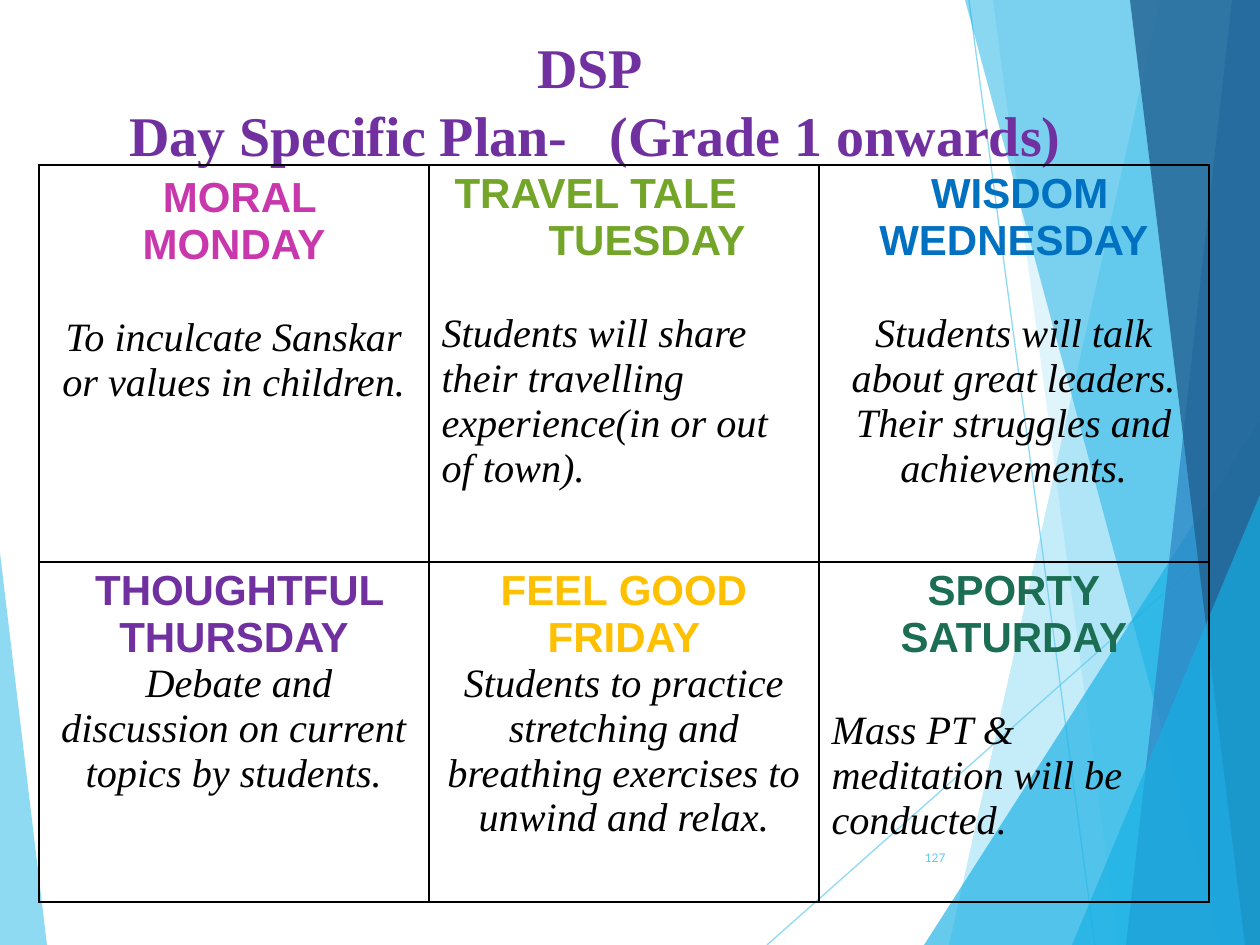
from lxml import etree
from pptx import Presentation
from pptx.dml.color import RGBColor
from pptx.enum.shapes import MSO_CONNECTOR, MSO_SHAPE
from pptx.enum.text import MSO_ANCHOR, PP_ALIGN
from pptx.oxml.ns import qn
from pptx.util import Emu, Pt

PX = 914400 / 126
WIDTH, HEIGHT = 1260, 945

SKY = RGBColor(0x5F, 0xCB, 0xEF)
CYAN = RGBColor(0x17, 0xB0, 0xE4)
BLUE = RGBColor(0x2E, 0x83, 0xC3)
NAVY = RGBColor(0x22, 0x62, 0x92)
PURPLE = RGBColor(0x70, 0x30, 0xA0)
PINK = RGBColor(0xC9, 0x37, 0xAD)
GREEN = RGBColor(0x72, 0xA5, 0x28)
AZURE = RGBColor(0x00, 0x70, 0xC0)
AMBER = RGBColor(0xFF, 0xC0, 0x00)
FOREST = RGBColor(0x1B, 0x6E, 0x53)
BLACK = RGBColor(0, 0, 0)
LEFT, CENTER, RIGHT = PP_ALIGN.LEFT, PP_ALIGN.CENTER, PP_ALIGN.RIGHT


def px(*lengths):
    return [Emu(round(length * PX)) for length in lengths]


def set_opacity(properties, percent):
    """Make the solid colour inside a shape or line element translucent."""
    color = properties.find(".//" + qn("a:srgbClr"))
    etree.SubElement(color, qn("a:alpha")).set("val", str(percent * 1000))


presentation = Presentation()
presentation.slide_width, presentation.slide_height = px(WIDTH, HEIGHT)
slide = presentation.slides.add_slide(presentation.slide_layouts[6])
shapes = slide.shapes

# Background facets
for ends in [(969, 0, 1095, HEIGHT), (WIDTH, 508, 767, HEIGHT)]:
    line = shapes.add_connector(MSO_CONNECTOR.STRAIGHT, *px(*ends))
    line.line.color.rgb = SKY
    line.line.width = Pt(0.75)
    properties = line._element.spPr
    set_opacity(properties, 70)
    etree.SubElement(properties, qn("a:effectLst"))

# Each band reaches the right edge: top-left x, bottom-left x, colour, opacity.
# Each triangle stands on the bottom edge: left, top, width, apex, colour, opacity.
facets = [
    ("band", (1160, 949), SKY, 36),
    ("band", (993, 1118), SKY, 20),
    ("triangle", (924, 420, 336, 1), CYAN, 66),
    ("band", (965, 1220), CYAN, 50),
    ("band", (1232, 1126), BLUE, 70),
    ("band", (1130, 1245), NAVY, 80),
    ("triangle", (1072, 495, 188, 1), CYAN, 66),
    ("triangle", (0, 553, 47, 0), SKY, 70),
]
for kind, place, color, opacity in facets:
    if kind == "band":
        top_x, bottom_x = place
        builder = shapes.build_freeform(top_x, 0, scale=PX)
        builder.add_line_segments([(WIDTH, 0), (WIDTH, HEIGHT), (bottom_x, HEIGHT)])
        facet = builder.convert_to_shape()
    else:
        left, top, width, apex = place
        facet = shapes.add_shape(MSO_SHAPE.ISOSCELES_TRIANGLE, *px(left, top, width, HEIGHT - top))
        facet.adjustments[0] = apex
    facet.shadow.inherit = False
    facet.fill.solid()
    facet.fill.fore_color.rgb = color
    facet.line.fill.background()
    set_opacity(facet._element.spPr, opacity)

# Title
title = shapes.add_textbox(*px(35, 19, 1121, 146)).text_frame
title.word_wrap = True
title.margin_top, title.margin_bottom = px(13, 0)
title.text = "DSP \nDay Specific Plan-   (Grade 1 onwards)"
for paragraph in title.paragraphs:
    paragraph.alignment = CENTER
    paragraph.space_before = Pt(1)
    paragraph.font.name = "Times New Roman"
    paragraph.font.size = Pt(32)
    paragraph.font.bold = True
    paragraph.font.color.rgb = PURPLE

# Weekly plan: heading lines, heading colour, body, body alignment, gap in points
plan = [
    [
        ([" MORAL", "MONDAY"], PINK,
         "To inculcate Sanskar or values in children.", CENTER, 27),
        (["TRAVEL TALE", "TUESDAY"], GREEN,
         "Students will share their travelling experience(in or out of town).", LEFT, 27),
        ([" WISDOM", "WEDNESDAY"], AZURE,
         "Students will talk about great leaders. Their struggles and achievements.", CENTER, 27),
    ],
    [
        ([" THOUGHTFUL", "THURSDAY"], PURPLE,
         " Debate and discussion on current topics by students.", CENTER, 0),
        (["FEEL GOOD", "FRIDAY"], AMBER,
         "Students to practice stretching and breathing exercises to unwind and relax.", CENTER, 0),
        (["SPORTY", "SATURDAY"], FOREST,
         "Mass PT & meditation will be conducted.", LEFT, 27),
    ],
]
TUESDAY_INDENTS = px(13, 107)

table = shapes.add_table(2, 3, *px(39, 165, 1170, 737)).table
table.first_row = table.horz_banding = False
for column in table.columns:
    column.width = px(390)[0]
for row, height in zip(table.rows, px(397, 340)):
    row.height = height

for row, entries in zip(table.rows, plan):
    for cell, (heading, color, body, body_alignment, gap) in zip(row.cells, entries):
        cell.margin_top = px(10 if color == PINK else 6)[0]
        cell.text = "\n".join([*heading, body])
        *heading_paragraphs, body_paragraph = cell.text_frame.paragraphs
        for paragraph in heading_paragraphs:
            paragraph.alignment = CENTER
            paragraph.font.name = "Arial"
            paragraph.font.size = Pt(24)
            paragraph.font.bold = True
            paragraph.font.color.rgb = color
        if color == GREEN:
            for paragraph, indent in zip(heading_paragraphs, TUESDAY_INDENTS):
                paragraph.alignment = LEFT
                paragraph._p.get_or_add_pPr().set("marL", str(indent))
        body_paragraph.alignment = body_alignment
        body_paragraph.space_before = Pt(gap)
        body_paragraph.font.name = "Times New Roman"
        body_paragraph.font.size = Pt(23)
        body_paragraph.font.italic = True
        body_paragraph.font.color.rgb = BLACK

        properties = cell._tc.get_or_add_tcPr()
        for side in ("a:lnL", "a:lnR", "a:lnT", "a:lnB"):
            border = etree.SubElement(properties, qn(side), w=str(Pt(1)))
            fill = etree.SubElement(border, qn("a:solidFill"))
            etree.SubElement(fill, qn("a:srgbClr"), val=str(BLACK))
        cell.fill.background()

# Slide number
number = shapes.add_textbox(*px(888, 833, 70, 50)).text_frame
number.word_wrap = True
number.vertical_anchor = MSO_ANCHOR.MIDDLE
number.text = "127"
paragraph = number.paragraphs[0]
paragraph.alignment = RIGHT
paragraph.font.name = "Lato"
paragraph.font.size = Pt(6.8)
paragraph.font.color.rgb = SKY

presentation.save("out.pptx")
